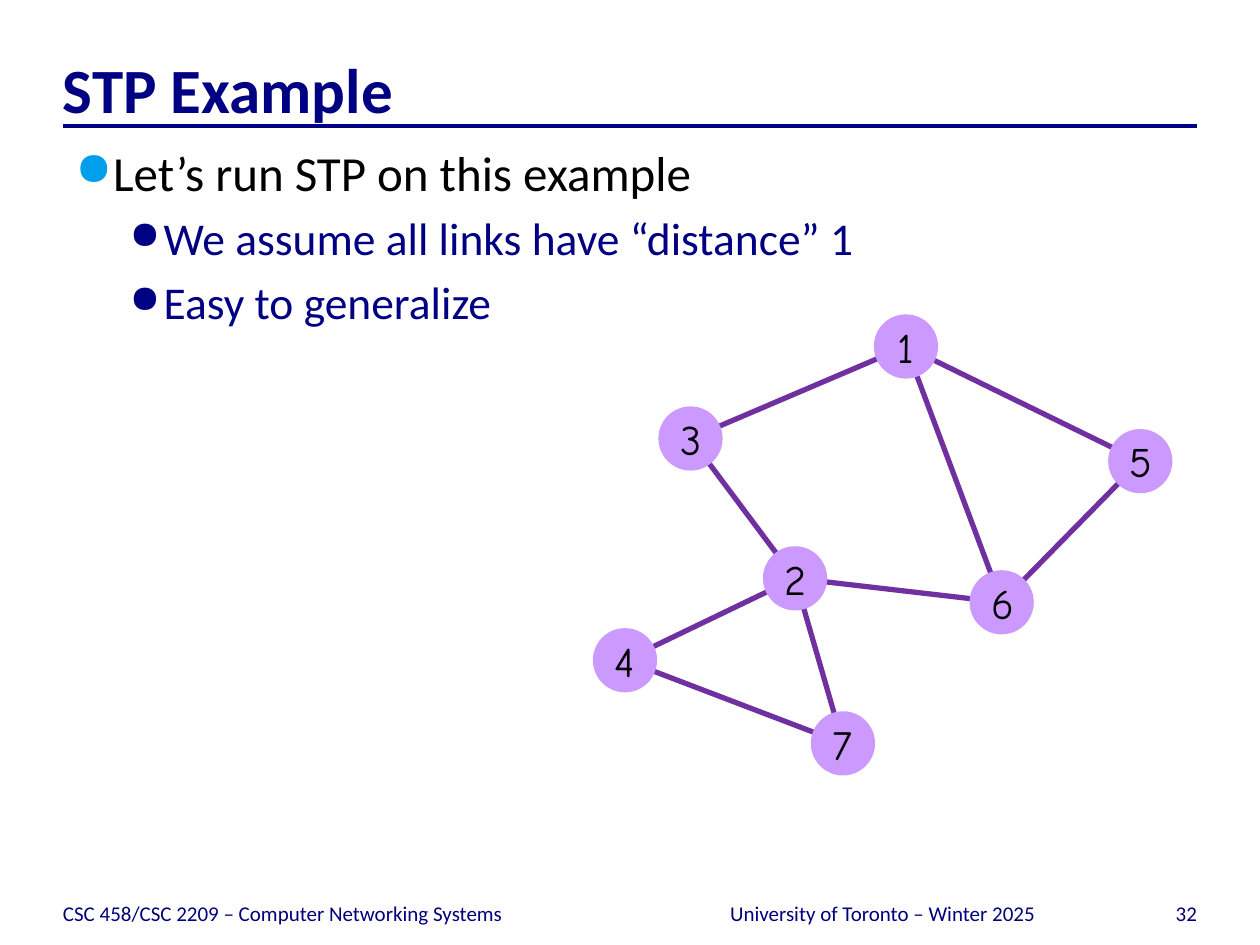
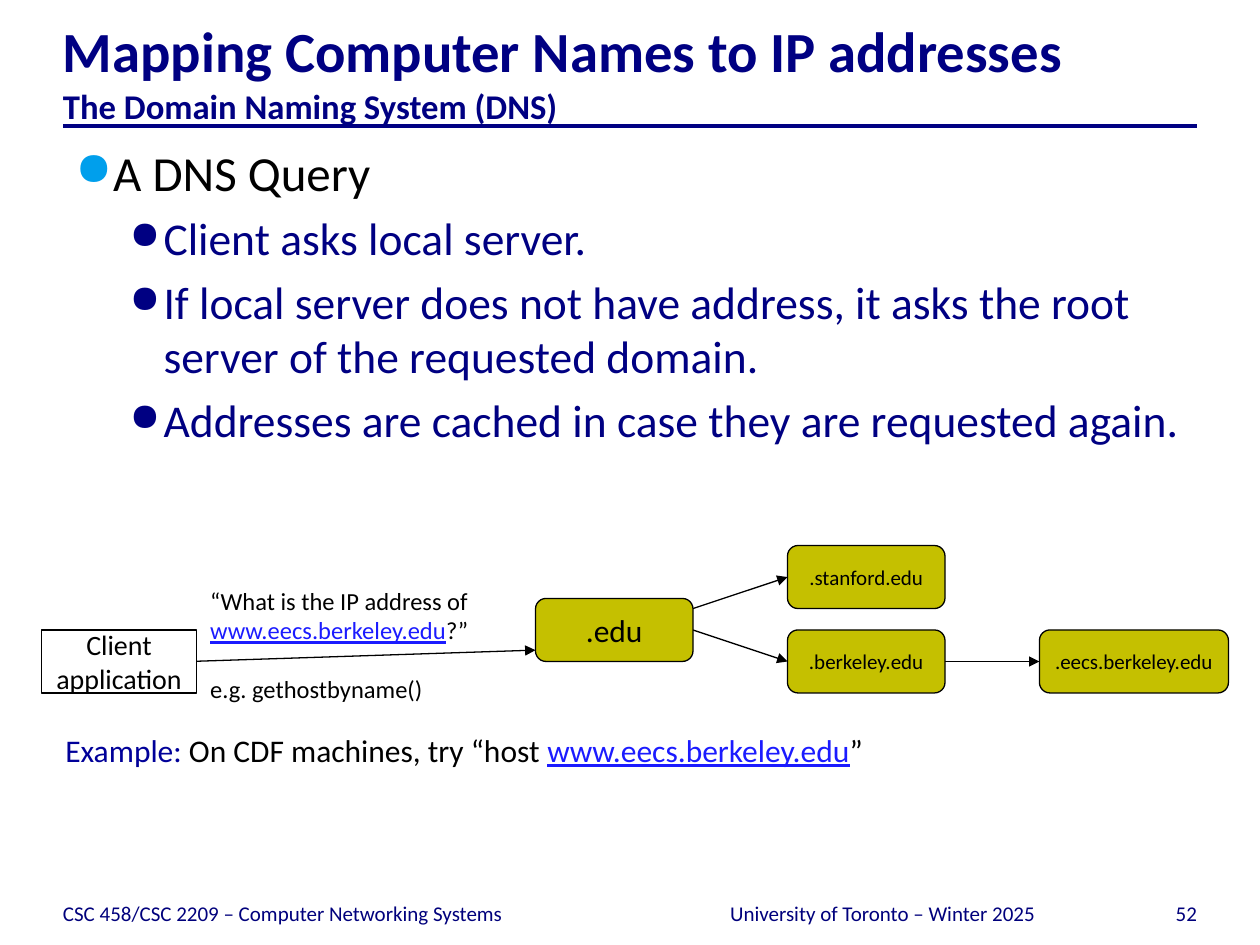
import pptx
import pptx.util
import pptx.dml.color
import pptx.enum.shapes
import pptx.enum.text
import pptx.oxml
import pptx.oxml.ns

Inches = pptx.util.Inches
Pt = pptx.util.Pt
rgb = pptx.dml.color.RGBColor.from_string
qn = pptx.oxml.ns.qn
SHAPE = pptx.enum.shapes.MSO_SHAPE
ALIGN = pptx.enum.text.PP_ALIGN
ANCHOR = pptx.enum.text.MSO_ANCHOR

NAVY, FOOTER, BLACK, LINK = "000082", "00007C", "000000", "1B1BFF"
LEFT, WIDTH = 0.5, 9
NODE_SIZE = 0.51
A_NS = 'xmlns:a="http://schemas.openxmlformats.org/drawingml/2006/main"'


def write(sp, lines, size, color=BLACK, align=ALIGN.LEFT, anchor=ANCHOR.TOP,
          insets=(0.1, 0.05, 0.1, 0.05), wrap=True, face="Calibri"):
    """Fill sp with lines; a line is a string or a list of (text, colour) runs."""
    tf = sp.text_frame
    tf.word_wrap = wrap
    tf.vertical_anchor = anchor
    tf.margin_left, tf.margin_top, tf.margin_right, tf.margin_bottom = map(Inches, insets)
    for i, line in enumerate(lines):
        p = tf.paragraphs[0] if i == 0 else tf.add_paragraph()
        p.alignment = align
        p.font.name = face
        p.font.size = Pt(size)
        if isinstance(line, str):
            p.font.color.rgb = rgb(color)
            p.add_run().text = line
            continue
        for text, run_color in line:
            r = p.add_run()
            r.text = text
            r.font.color.rgb = rgb(run_color)
            if run_color == LINK:
                r.font.underline = True
    return tf


def add_line(s, start, end, color, width, arrow=False):
    x1, y1, x2, y2 = map(Inches, (*start, *end))
    line = s.shapes.add_connector(pptx.enum.shapes.MSO_CONNECTOR.STRAIGHT, x1, y1, x2, y2)
    line.line.color.rgb = rgb(color)
    line.line.width = Pt(width)
    sp_pr = line._element.spPr
    if arrow:
        sp_pr.find(qn("a:ln")).append(pptx.oxml.parse_xml(f'<a:tailEnd {A_NS} type="triangle"/>'))
    sp_pr.append(pptx.oxml.parse_xml(f"<a:effectLst {A_NS}/>"))


prs = pptx.Presentation()
prs.slide_width, prs.slide_height = Inches(10), Inches(7.5)

# Title runs, body points (the first is the heading) and page number
contents = [
    ([("STP Example", 36)],
     ["Let’s run STP on this example",
      "We assume all links have “distance” 1",
      "Easy to generalize"],
     "32"),
    ([("Mapping Computer Names to IP addresses", 32.4),
      ("The Domain Naming System (DNS)", 19.8)],
     ["A DNS Query",
      "Client asks local server.",
      "If local server does not have address, it asks the root server of the requested domain.",
      "Addresses are cached in case they are requested again."],
     "52"),
]

# Body levels: size, text colour, bullet colour, bullet percent, left indent, hanging
levels = [
    (28, BLACK, "009FEC", 95, 0.3, 0.3),
    (26, NAVY, NAVY, 85, 0.7, 0.27),
]

for title, points, page in contents:
    s = prs.slides.add_slide(prs.slide_layouts[6])
    add_line(s, (LEFT, 1), (LEFT + WIDTH, 1), NAVY, 2.25)

    sp = s.shapes.add_textbox(Inches(LEFT), Inches(0.33), Inches(WIDTH), Inches(0.67))
    tf = sp.text_frame
    tf.word_wrap = True
    tf.vertical_anchor = ANCHOR.BOTTOM
    tf.margin_left = tf.margin_right = tf.margin_bottom = 0
    tf.margin_top = Inches(0.05)
    p = tf.paragraphs[0]
    p.font.name = "Calibri"
    p.font.bold = True
    p.font.color.rgb = rgb(NAVY)
    for i, (text, size) in enumerate(title):
        if i:
            p.add_line_break()
        r = p.add_run()
        r.text = text
        r.font.size = Pt(size)

    sp = s.shapes.add_textbox(Inches(LEFT), Inches(1.08), Inches(WIDTH), Inches(5.83))
    tf = sp.text_frame
    tf.word_wrap = True
    for i, text in enumerate(points):
        p = tf.paragraphs[0] if i == 0 else tf.add_paragraph()
        p.level = min(i, 1)
        size, color, bullet_color, percent, indent, hanging = levels[p.level]
        p_pr = p._p.get_or_add_pPr()
        p_pr.set("marL", str(Inches(indent)))
        p_pr.set("indent", str(-Inches(hanging)))
        for xml in (f'<a:buClr {A_NS}><a:srgbClr val="{bullet_color}"/></a:buClr>',
                    f'<a:buSzPct {A_NS} val="{percent * 1000}"/>',
                    f'<a:buChar {A_NS} char="●"/>'):
            p_pr.append(pptx.oxml.parse_xml(xml))
        p.space_before = Pt(size * 0.2)
        p.font.name = "Calibri"
        p.font.size = Pt(size)
        p.font.color.rgb = rgb(color)
        p.add_run().text = text

    for text, left, width, align in [
        ("CSC 458/CSC 2209 – Computer Networking Systems", LEFT, 4.83, ALIGN.LEFT),
        ("University of Toronto – Winter 2025", 5.42, 3.17, ALIGN.CENTER),
        (page, 8.67, 0.83, ALIGN.RIGHT),
    ]:
        sp = s.shapes.add_textbox(Inches(left), Inches(6.95), Inches(width), Inches(0.4))
        write(sp, [text], 12, FOOTER, align, ANCHOR.BOTTOM, (0, 0, 0, 0))

stp, dns = prs.slides

# Network graph: node centres and the links between them
nodes = {"1": (7.19, 2.75), "2": (6.31, 4.59), "3": (5.48, 3.48), "4": (4.96, 5.24),
         "5": (9.05, 3.66), "6": (7.95, 4.78), "7": (6.69, 5.9)}
for a, b in ["13", "15", "16", "65", "62", "23", "24", "47", "72"]:
    add_line(stp, nodes[a], nodes[b], "7030A0", 3)
for name, (x, y) in nodes.items():
    sp = stp.shapes.add_shape(SHAPE.OVAL, Inches(x - NODE_SIZE / 2), Inches(y - NODE_SIZE / 2),
                              Inches(NODE_SIZE), Inches(NODE_SIZE))
    sp.shadow.inherit = False
    sp.fill.solid()
    sp.fill.fore_color.rgb = rgb("CC99FF")
    sp.line.fill.background()
    write(sp, [name], 24, align=ALIGN.CENTER, anchor=ANCHOR.MIDDLE, face="Comic Neue")

# DNS query path
for start, end in [((1.5, 5.25), (4.25, 5.16)), ((5.5, 4.83), (6.25, 4.58)),
                   ((5.5, 5), (6.25, 5.25)), ((7.5, 5.25), (8.25, 5.25))]:
    add_line(dns, start, end, BLACK, 0.75, arrow=True)

SERVER = "C5C000"
for lines, left, top, width, size, kind, fill in [
    ([".stanford.edu"], 6.25, 4.33, 1.25, 12, SHAPE.ROUNDED_RECTANGLE, SERVER),
    ([".berkeley.edu"], 6.25, 5, 1.25, 12, SHAPE.ROUNDED_RECTANGLE, SERVER),
    ([".eecs.berkeley.edu"], 8.25, 5, 1.5, 12, SHAPE.ROUNDED_RECTANGLE, SERVER),
    ([".edu"], 4.25, 4.75, 1.25, 18, SHAPE.ROUNDED_RECTANGLE, SERVER),
    (["Client", "application"], 0.33, 5, 1.23, 16, SHAPE.RECTANGLE, "FFFFFF"),
]:
    sp = dns.shapes.add_shape(kind, Inches(left), Inches(top), Inches(width), Inches(0.5))
    sp.shadow.inherit = False
    sp.fill.solid()
    sp.fill.fore_color.rgb = rgb(fill)
    sp.line.color.rgb = rgb(BLACK)
    sp.line.width = Pt(0.75)
    write(sp, lines, size, align=ALIGN.CENTER, anchor=ANCHOR.MIDDLE, wrap=False)

host = ("www.eecs.berkeley.edu", LINK)
sp = dns.shapes.add_textbox(Inches(1.57), Inches(4.6), Inches(2.29), Inches(1.03))
tf = write(sp, ["“What is the IP address of", [host, ("?”", BLACK)], "e.g. gethostbyname()"],
           14, wrap=False)
tf.paragraphs[2].space_before = Pt(17)

sp = dns.shapes.add_textbox(Inches(0.42), Inches(5.75), Inches(6.59), Inches(0.4))
write(sp, [[("Example:", "000099"), (" On CDF machines, try “host ", BLACK), host, ("”", BLACK)]],
      18, wrap=False)

prs.save("out.pptx")
